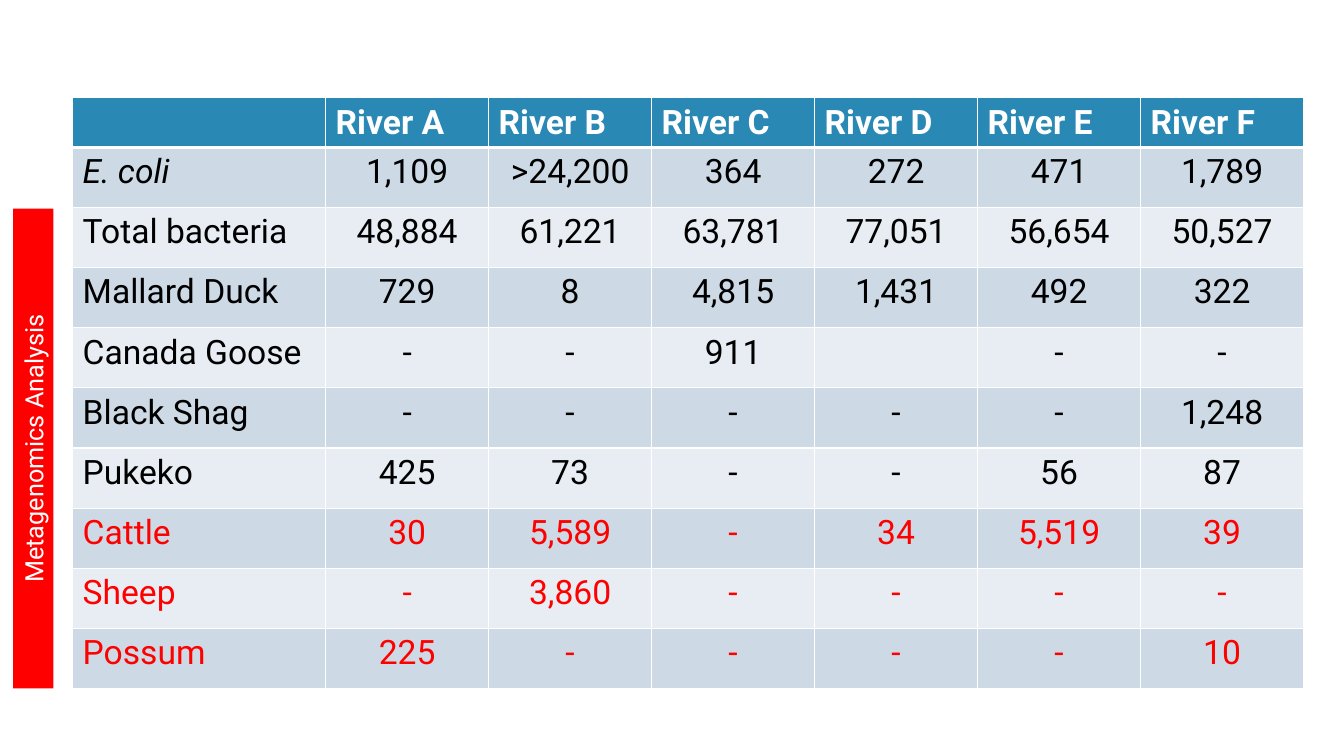
from dataclasses import dataclass

from lxml.etree import SubElement
from pptx import Presentation
from pptx.dml.color import RGBColor
from pptx.enum.shapes import MSO_SHAPE
from pptx.enum.text import MSO_ANCHOR, PP_ALIGN
from pptx.oxml.ns import qn
from pptx.util import Inches, Pt

RIVERS = ["", "River A", "River B", "River C", "River D", "River E", "River F"]
COUNTS = [
    ["E. coli", "1,109", ">24,200", "364", "272", "471", "1,789"],
    ["Total bacteria", "48,884", "61,221", "63,781", "77,051", "56,654", "50,527"],
    ["Mallard Duck", "729", "8", "4,815", "1,431", "492", "322"],
    ["Canada Goose", "-", "-", "911", "", "-", "-"],
    ["Black Shag", "-", "-", "-", "-", "-", "1,248"],
    ["Pukeko", "425", "73", "-", "-", "56", "87"],
    ["Cattle", "30", "5,589", "-", "34", "5,519", "39"],
    ["Sheep", "-", "3,860", "-", "-", "-", "-"],
    ["Possum", "225", "-", "-", "-", "-", "10"],
]
MAMMALS = {"Cattle", "Sheep", "Possum"}
ITALIC_LABEL = "E. coli"
BAR_LABEL = "Metagenomics Analysis"


@dataclass(frozen=True)
class Theme:
    font: str = "Roboto"
    table_size: int = 24
    bar_size: int = 18
    header: str = "2A88B5"
    bands: tuple = ("CDDAE5", "E8EDF3")
    white: str = "FFFFFF"
    text: str = "000000"
    accent: str = "FF0000"


THEME = Theme()
TABLE_LEFT, TABLE_TOP, TABLE_WIDTH, TABLE_HEIGHT = 0.72, 0.97, 12.21, 5.85
LABEL_WIDTH, HEADER_HEIGHT = 2.51, 0.48
BAR_CENTER_X, BAR_CENTER_Y, BAR_LENGTH, BAR_THICKNESS = 0.33, 4.45, 4.76, 0.4


def format_font(font, size, color, bold=False, italic=False):
    font.name = THEME.font
    font.size = Pt(size)
    font.color.rgb = RGBColor.from_string(color)
    font.bold = bold
    font.italic = italic


def set_borders(cell, bottom_points):
    """Draw white cell borders, 1 pt except for the bottom one."""
    properties = cell._tc.get_or_add_tcPr()
    for side, points in (("L", 1), ("R", 1), ("T", 1), ("B", bottom_points)):
        line = SubElement(properties, qn(f"a:ln{side}"), w=str(Pt(points)))
        fill = SubElement(line, qn("a:solidFill"))
        SubElement(fill, qn("a:srgbClr"), val=THEME.white)


def fill_cell(cell, text, row, column, label):
    is_header = row == 0
    # Border elements must precede the fill in the cell properties.
    set_borders(cell, 3 if is_header else 1)
    cell.fill.solid()
    background = THEME.header if is_header else THEME.bands[(row - 1) % 2]
    cell.fill.fore_color.rgb = RGBColor.from_string(background)
    if not text:
        return

    cell.text_frame.text = text
    paragraph = cell.text_frame.paragraphs[0]
    if not is_header and column > 0:
        paragraph.alignment = PP_ALIGN.CENTER
    body_color = THEME.accent if label in MAMMALS else THEME.text
    color = THEME.white if is_header else body_color
    format_font(paragraph.runs[0].font, THEME.table_size, color,
                bold=is_header, italic=text == ITALIC_LABEL)


def add_river_table(slide):
    rows = [RIVERS] + COUNTS
    table = slide.shapes.add_table(
        len(rows), len(RIVERS), Inches(TABLE_LEFT), Inches(TABLE_TOP),
        Inches(TABLE_WIDTH), Inches(TABLE_HEIGHT)).table

    river_width = (TABLE_WIDTH - LABEL_WIDTH) / (len(RIVERS) - 1)
    for index, column in enumerate(table.columns):
        column.width = Inches(river_width if index else LABEL_WIDTH)
    count_height = (TABLE_HEIGHT - HEADER_HEIGHT) / len(COUNTS)
    for index, row in enumerate(table.rows):
        row.height = Inches(count_height if index else HEADER_HEIGHT)

    for row, values in enumerate(rows):
        for column, text in enumerate(values):
            fill_cell(table.cell(row, column), text, row, column, values[0])


def add_analysis_bar(slide):
    bar = slide.shapes.add_shape(
        MSO_SHAPE.RECTANGLE,
        Inches(BAR_CENTER_X - BAR_LENGTH / 2),
        Inches(BAR_CENTER_Y - BAR_THICKNESS / 2),
        Inches(BAR_LENGTH), Inches(BAR_THICKNESS))
    bar.rotation = 270
    bar.shadow.inherit = False
    bar.fill.solid()
    bar.fill.fore_color.rgb = RGBColor.from_string(THEME.accent)
    bar.line.fill.background()
    bar.text_frame.text = BAR_LABEL
    bar.text_frame.word_wrap = True
    bar.text_frame.vertical_anchor = MSO_ANCHOR.MIDDLE
    paragraph = bar.text_frame.paragraphs[0]
    paragraph.alignment = PP_ALIGN.CENTER
    format_font(paragraph.runs[0].font, THEME.bar_size, THEME.white)


def main():
    presentation = Presentation()
    presentation.slide_width = Inches(13.33)
    presentation.slide_height = Inches(7.5)
    slide = presentation.slides.add_slide(presentation.slide_layouts[6])
    add_river_table(slide)
    add_analysis_bar(slide)
    presentation.save("out.pptx")


if __name__ == "__main__":
    main()
